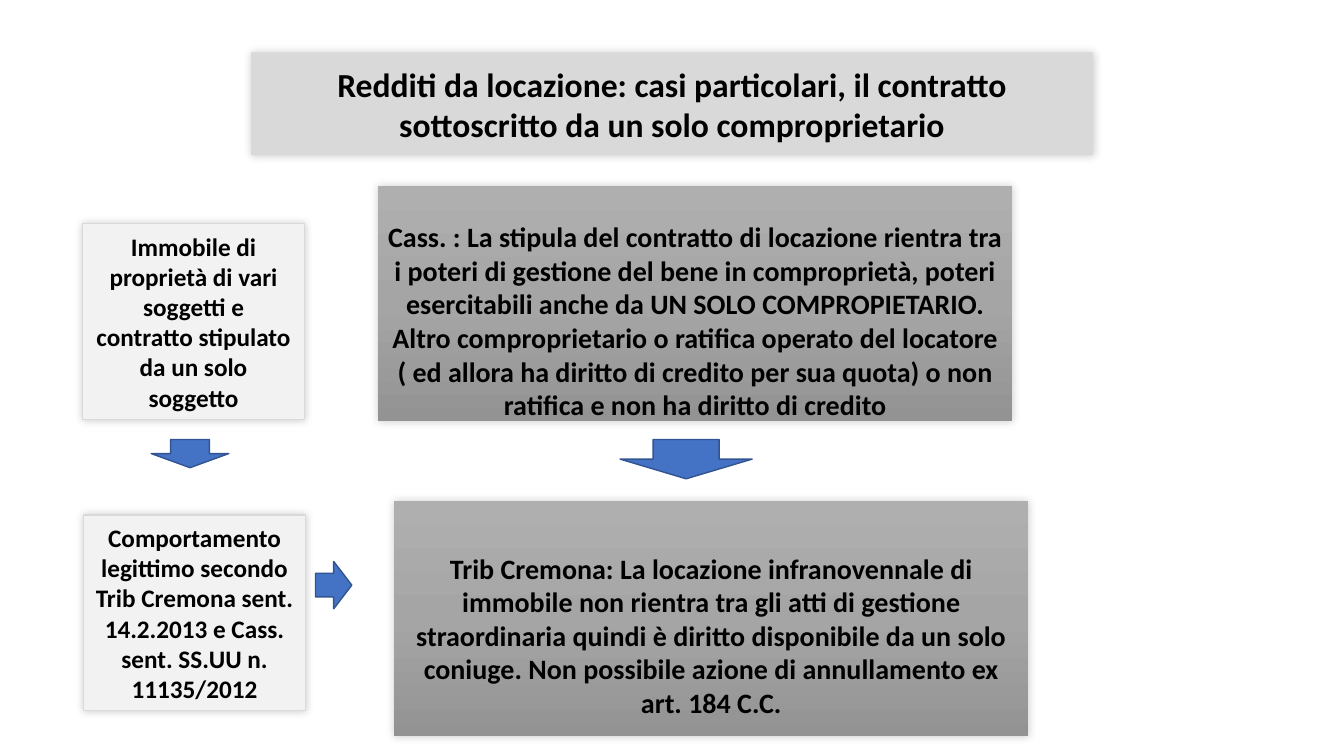
from copy import deepcopy
from dataclasses import dataclass

from lxml import etree
from pptx import Presentation
from pptx.dml.color import RGBColor
from pptx.enum.shapes import MSO_SHAPE
from pptx.enum.text import MSO_ANCHOR, MSO_AUTO_SIZE, PP_ALIGN
from pptx.oxml.ns import qn
from pptx.util import Inches, Pt

RECTANGLE = MSO_SHAPE.RECTANGLE
DOWN_ARROW = MSO_SHAPE.DOWN_ARROW
RIGHT_ARROW = MSO_SHAPE.RIGHT_ARROW
MIDDLE = MSO_ANCHOR.MIDDLE
CENTER = PP_ALIGN.CENTER
NO_AUTOFIT = MSO_AUTO_SIZE.NONE
TITLE_ONLY = 5


@dataclass(frozen=True)
class Theme:
    font: str = "Calibri"
    text: str = "000000"
    title_fill: str = "D9D9D9"
    case_fill: str = "F2F2F2"
    case_line: str = "D9D9D9"
    ruling_fill: tuple = ("AFAFAF", "A5A5A5", "939393")
    arrow_fill: str = "4472C4"
    arrow_line: str = "325491"
    title_size: int = 24
    case_size: int = 18
    ruling_size: int = 20


THEME = Theme()

TITLE = ("Redditi da locazione: casi particolari, il contratto "
         "sottoscritto da un solo comproprietario")
TITLE_BOX = (2.49, 0.52, 8.35, 1.02)

CASES = [
    ((0.82, 2.22, 2.2, 1.94),
     "Immobile di proprietà di vari soggetti e contratto stipulato da un solo soggetto"),
    ((0.83, 5.11, 2.2, 1.94),
     "Comportamento legittimo secondo Trib Cremona sent. 14.2.2013 "
     "e Cass. sent. SS.UU n. 11135/2012"),
]

RULINGS = [
    ((3.75, 1.85, 6.29, 2.33),
     "Cass. : La stipula del contratto di locazione rientra tra i poteri di gestione "
     "del bene in comproprietà, poteri esercitabili anche da UN SOLO COMPROPIETARIO. "
     "Altro comproprietario o ratifica operato del locatore ( ed allora ha diritto di "
     "credito per sua quota) o non ratifica e non ha diritto di credito"),
    ((3.91, 4.97, 6.29, 2.33),
     "Trib Cremona: La locazione infranovennale di immobile non rientra tra gli atti di "
     "gestione straordinaria quindi è diritto disponibile da un solo coniuge. "
     "Non possibile azione di annullamento ex art. 184 C.C."),
]

ARROWS = [
    (DOWN_ARROW, (1.5, 4.36, 0.77, 0.28)),
    (RIGHT_ARROW, (3.13, 5.57, 0.36, 0.47)),
    (DOWN_ARROW, (6.15, 4.36, 1.31, 0.39)),
]


def color(value):
    return RGBColor.from_string(value)


def paint(shape, fill, line=None):
    shape.fill.solid()
    shape.fill.fore_color.rgb = color(fill)
    outline(shape, line)


def outline(shape, line):
    if line:
        shape.line.color.rgb = color(line)
        shape.line.width = Pt(1)
    else:
        shape.line.fill.background()


def paint_gradient(shape, colors):
    """Fill from top to bottom with three evenly spaced colours."""
    first, middle, last = colors
    shape.fill.gradient()
    shape.fill.gradient_angle = 270
    top, bottom = shape.fill.gradient_stops
    top.position, bottom.position = 0, 1
    top.color.rgb, bottom.color.rgb = color(first), color(last)
    stops = shape.element.spPr.find(".//" + qn("a:gsLst"))
    center_stop = deepcopy(stops[0])
    center_stop.set("pos", "50000")
    center_stop[0].set("val", middle)
    stops.insert(1, center_stop)
    outline(shape, None)


def add_soft_shadow(shape):
    shape.shadow.inherit = False
    effects = shape.element.spPr.find(qn("a:effectLst"))
    shadow = etree.SubElement(effects, qn("a:outerShdw"), blurRad=str(Pt(6)),
                              dist="0", dir="13500000", rotWithShape="0")
    tint = etree.SubElement(shadow, qn("a:srgbClr"), val="000000")
    etree.SubElement(tint, qn("a:alpha"), val="20000")


def write(shape, text, size):
    frame = shape.text_frame
    frame.text = text
    frame.word_wrap = True
    frame.auto_size = NO_AUTOFIT
    frame.vertical_anchor = MIDDLE
    para = frame.paragraphs[0]
    para.alignment = CENTER
    font = para.runs[0].font
    font.name, font.size, font.bold = THEME.font, Pt(size), True
    font.color.rgb = color(THEME.text)


def add_shape(page, kind, box):
    shape = page.shapes.add_shape(kind, *map(Inches, box))
    shape.shadow.inherit = False
    return shape


def set_title(page, box, text):
    title = page.shapes.title
    title.left, title.top, title.width, title.height = map(Inches, box)
    paint(title, THEME.title_fill)
    add_soft_shadow(title)
    write(title, text, THEME.title_size)


def add_case(page, box, text):
    case = add_shape(page, RECTANGLE, box)
    paint(case, THEME.case_fill, THEME.case_line)
    add_soft_shadow(case)
    write(case, text, THEME.case_size)


def add_ruling(page, box, text):
    ruling = add_shape(page, RECTANGLE, box)
    paint_gradient(ruling, THEME.ruling_fill)
    add_soft_shadow(ruling)
    write(ruling, text, THEME.ruling_size)
    # The text sits below the middle of its box
    ruling.text_frame.margin_top = Inches(0.33)
    ruling.text_frame.margin_bottom = 0


def add_arrow(page, kind, box):
    paint(add_shape(page, kind, box), THEME.arrow_fill, THEME.arrow_line)


def main():
    deck = Presentation()
    deck.slide_width, deck.slide_height = Inches(13.33), Inches(7.5)
    page = deck.slides.add_slide(deck.slide_layouts[TITLE_ONLY])

    # Heading
    set_title(page, TITLE_BOX, TITLE)
    # Left column: the case and its outcome
    for box, text in CASES:
        add_case(page, box, text)
    # Right column: court rulings
    for box, text in RULINGS:
        add_ruling(page, box, text)
    # Flow between the boxes
    for kind, box in ARROWS:
        add_arrow(page, kind, box)

    deck.save("out.pptx")


if __name__ == "__main__":
    main()
